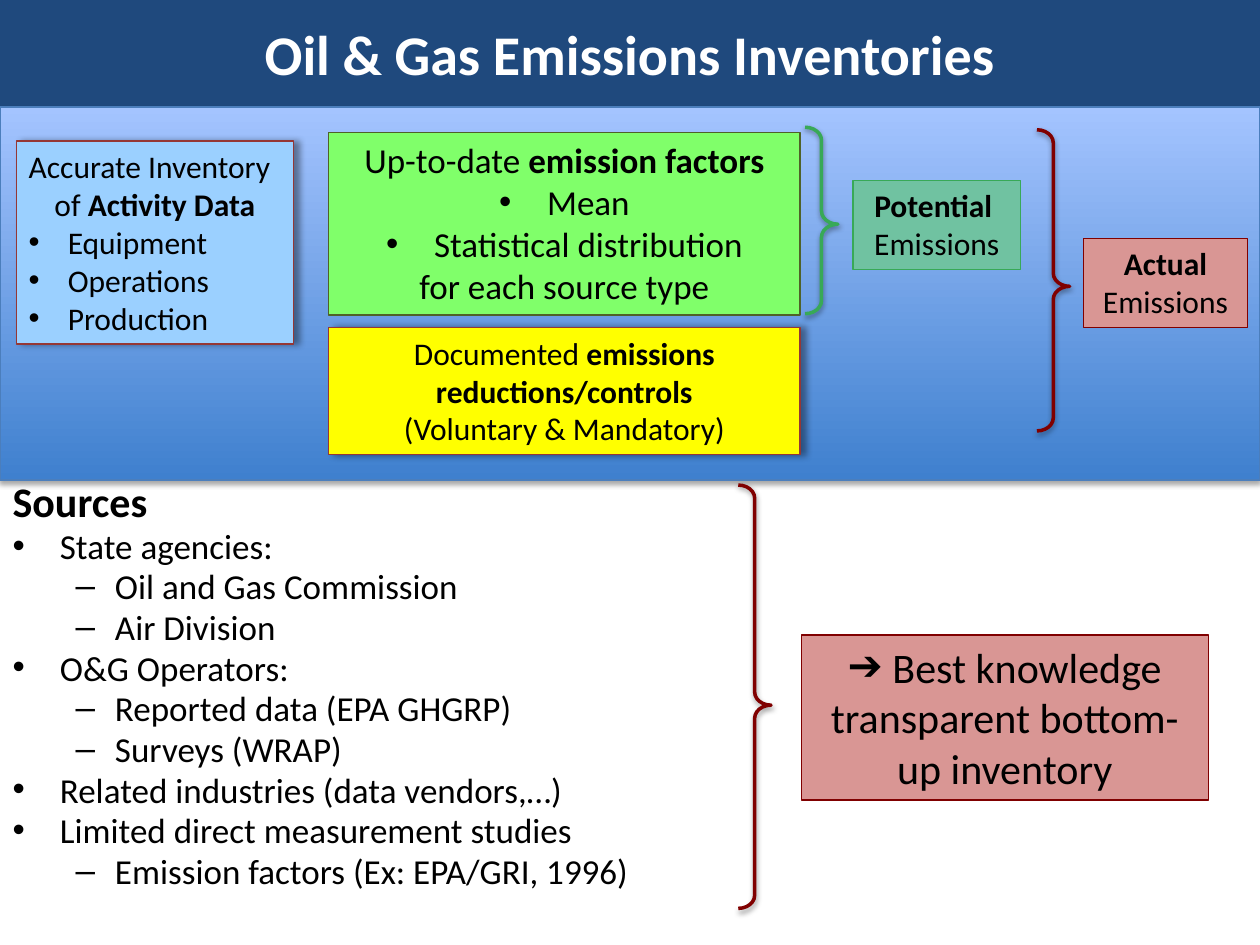
from lxml.etree import SubElement
from pptx import Presentation
from pptx.dml.color import RGBColor
from pptx.enum.shapes import MSO_SHAPE
from pptx.enum.text import MSO_ANCHOR, MSO_AUTO_SIZE, PP_ALIGN
from pptx.oxml.ns import qn
from pptx.util import Inches, Pt

rgb = RGBColor.from_string


def style(shape, line, width, shadow=None):
    shape.line.color.rgb = rgb(line)
    shape.line.width = Pt(width)
    shape.shadow.inherit = False
    if shadow:
        opacity, blur, distance, degrees = shadow
        effects = shape._element.spPr.find(qn("a:effectLst"))
        outer = SubElement(effects, qn("a:outerShdw"), blurRad=str(Pt(blur)), dist=str(Pt(distance)),
                           dir=str(degrees * 60000), rotWithShape="0")
        black = SubElement(outer, qn("a:srgbClr"), val="000000")
        SubElement(black, qn("a:alpha"), val=str(opacity * 1000))


def write(paragraph, runs, size, color="000000"):
    for text, bold in runs:
        run = paragraph.add_run()
        run.text = text
        run.font.name = "Calibri"
        run.font.size = Pt(size)
        run.font.bold = bold
        run.font.color.rgb = rgb(color)


prs = Presentation()
prs.slide_width, prs.slide_height = Inches(10), Inches(7.5)
slide = prs.slides.add_slide(prs.slide_layouts[1])
shapes = slide.shapes

panel = shapes.add_shape(MSO_SHAPE.RECTANGLE, 0, Inches(0.85), Inches(10), Inches(2.96))
panel.fill.gradient()
panel.fill.gradient_angle = 90
for stop, color in zip(panel.fill.gradient_stops, ("3F80CE", "A4C4FF")):
    stop.color.rgb = rgb(color)
style(panel, "4B7EBC", 0.75, (35, 3.1, 1.8, 90))

title = shapes.title
title.left, title.top, title.width, title.height = 0, 0, Inches(10), Inches(0.85)
title.fill.solid()
title.fill.fore_color.rgb = rgb("1F497D")
title.text_frame.vertical_anchor = MSO_ANCHOR.MIDDLE
heading = title.text_frame.paragraphs[0]
heading.alignment = PP_ALIGN.CENTER
write(heading, [("Oil & Gas Emissions Inventories", True)], 32, "FFFFFF")

LEFT, CENTER = PP_ALIGN.LEFT, PP_ALIGN.CENTER
card_shadow = (40, 4, 3, 0)
cards = [
    ((0.13, 1.12, 2.2, 1.61), "9BD0FF", "953735", card_shadow, 18, [
        (LEFT, None, 0, [("Accurate Inventory", False)]),
        (CENTER, None, 0, [("of ", False), ("Activity Data", True)]),
        (LEFT, "•", 0.31, [("Equipment", False)]),
        (LEFT, "•", 0.31, [("Operations", False)]),
        (LEFT, "•", 0.31, [("Production", False)])]),
    ((2.61, 1.05, 3.74, 1.45), "80FF6A", "4F6228", None, 20, [
        (CENTER, None, 0, [("Up-to-date ", False), ("emission factors", True)]),
        (CENTER, "•", 0.38, [("Mean", False)]),
        (CENTER, "•", 0.38, [("Statistical distribution", False)]),
        (CENTER, None, 0, [("for each source type", False)])]),
    ((2.61, 2.6, 3.74, 1.01), "FFFF00", "953735", card_shadow, 18, [
        (CENTER, None, 0, [("Documented ", False), ("emissions reductions/controls", True)]),
        (CENTER, None, 0, [("(Voluntary & Mandatory)", False)])]),
    ((6.77, 1.43, 1.33, 0.71), "70C2A1", "38A957", None, 18, [
        (CENTER, None, 0, [("Potential ", True)]),
        (CENTER, None, 0, [("Emissions", False)])]),
    ((8.6, 1.89, 1.3, 0.71), "D99694", "800000", None, 18, [
        (CENTER, None, 0, [("Actual", True), (" Emissions", False)])]),
    ((6.36, 5.04, 3.23, 1.31), "D99694", "800000", None, 24, [
        (CENTER, "➔", 0, [(" Best knowledge transparent bottom-up inventory", False)])]),
]
for place, fill, line, shadow, size, paragraphs in cards:
    card = shapes.add_shape(MSO_SHAPE.RECTANGLE, *map(Inches, place))
    card.fill.solid()
    card.fill.fore_color.rgb = rgb(fill)
    style(card, line, 0.75, shadow)
    frame = card.text_frame
    frame.word_wrap = True
    frame.auto_size = MSO_AUTO_SIZE.SHAPE_TO_FIT_TEXT
    frame.vertical_anchor = MSO_ANCHOR.TOP
    for index, (alignment, bullet, indent, runs) in enumerate(paragraphs):
        paragraph = frame.add_paragraph() if index else frame.paragraphs[0]
        paragraph.alignment = alignment
        if bullet:
            properties = paragraph._p.get_or_add_pPr()
            if indent:
                properties.set("marL", str(Inches(indent)))
                properties.set("indent", str(-Inches(indent)))
            SubElement(properties, qn("a:buFont"), typeface="Arial")
            SubElement(properties, qn("a:buChar"), char=bullet)
        write(paragraph, runs, size)

braces = [
    (6.39, 1.01, 1.48, "38A957"),
    (8.23, 1.03, 2.39, "800000"),
    (5.86, 3.85, 3.36, "800000"),
]
for left, top, height, color in braces:
    brace = shapes.add_shape(MSO_SHAPE.RIGHT_BRACE, Inches(left), Inches(top), Inches(0.26), Inches(height))
    brace.adjustments[0], brace.adjustments[1] = 0.4, 0.52
    brace.fill.background()
    style(brace, color, 2, (38, 3.1, 1.6, 90))

sources = slide.placeholders[1]
sources.left, sources.top, sources.width, sources.height = map(Inches, (0, 3.8, 5.99, 3.56))
sources.text_frame.auto_size = MSO_AUTO_SIZE.NONE
sources_heading = sources.text_frame.paragraphs[0]
sources_heading.line_spacing = 0.8
heading_properties = sources_heading._p.get_or_add_pPr()
heading_properties.set("marL", "0")
heading_properties.set("indent", "0")
SubElement(heading_properties, qn("a:buNone"))
write(sources_heading, [("Sources", True)], 24)

source_list = [
    (0, "State agencies:"),
    (1, "Oil and Gas Commission"),
    (1, "Air Division"),
    (0, "O&G Operators:"),
    (1, "Reported data (EPA GHGRP)"),
    (1, "Surveys (WRAP)"),
    (0, "Related industries (data vendors,…)"),
    (0, "Limited direct measurement studies"),
    (1, "Emission factors (Ex: EPA/GRI, 1996)"),
]
for level, text in source_list:
    item = sources.text_frame.add_paragraph()
    item.level = level
    item.line_spacing = 0.8
    write(item, [(text, False)], 20)

prs.save("out.pptx")
